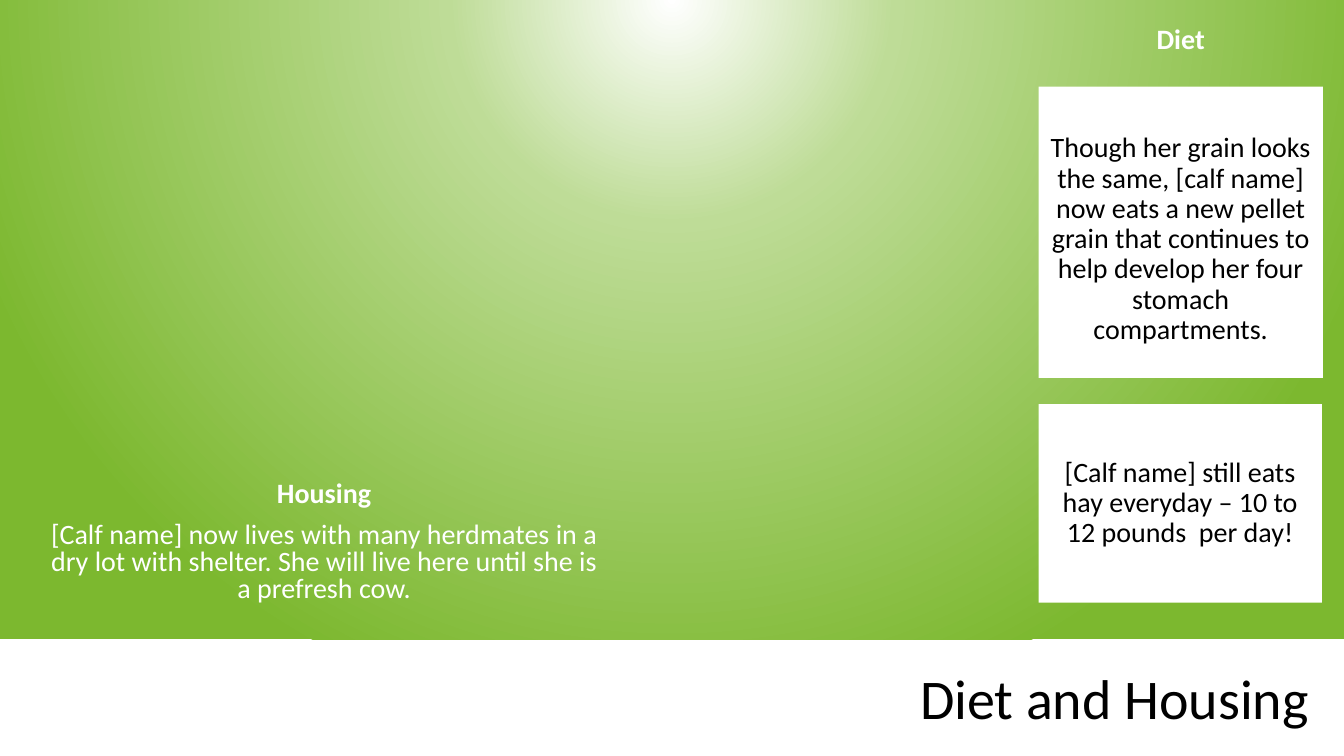
import pptx
import pptx.util
import pptx.oxml
import pptx.oxml.ns
import pptx.dml.color
import pptx.enum.shapes
import pptx.enum.text
from dataclasses import dataclass

Inches = pptx.util.Inches
Pt = pptx.util.Pt
Align = pptx.enum.text.PP_ALIGN
Anchor = pptx.enum.text.MSO_ANCHOR


@dataclass(frozen=True)
class Theme:
    font: str = "Calibri"
    white: str = "FFFFFF"
    black: str = "000000"
    pale: str = "BEDC97"
    green: str = "7CB82F"
    title: int = 40
    body: int = 20
    gap: int = 10


THEME = Theme()


def color(code):
    return pptx.dml.color.RGBColor.from_string(code)


def place(shape, left, top, width, height):
    shape.left, shape.top = Inches(left), Inches(top)
    shape.width, shape.height = Inches(width), Inches(height)


def add_run(para, text, size, tint, bold=False):
    run = para.add_run()
    run.text = text
    run.font.name = THEME.font
    run.font.size = Pt(size)
    run.font.bold = bold
    run.font.color.rgb = color(tint)


def add_rect(slide, left, top, width, height):
    rect = slide.shapes.add_shape(
        pptx.enum.shapes.MSO_SHAPE.RECTANGLE,
        Inches(left), Inches(top), Inches(width), Inches(height))
    rect.shadow.inherit = False
    rect.line.fill.background()
    return rect


def add_glow(slide):
    rect = add_rect(slide, 0, 0, 13.33, 6.34)
    rect.fill.gradient()
    grad = rect.element.spPr.find(pptx.oxml.ns.qn("a:gradFill"))
    stops = ((0, THEME.white), (30, THEME.pale), (100, THEME.green))
    marks = "".join(
        f'<a:gs pos="{pos * 1000}"><a:srgbClr val="{tint}"/></a:gs>'
        for pos, tint in stops)
    fresh = pptx.oxml.parse_xml(
        f'<a:gradFill {pptx.oxml.ns.nsdecls("a")} rotWithShape="1">'
        f'<a:gsLst>{marks}</a:gsLst><a:path path="circle">'
        '<a:fillToRect l="50000" t="-80000" r="50000" b="180000"/>'
        '</a:path></a:gradFill>')
    grad.getparent().replace(grad, fresh)


def set_title(slide, text):
    title = slide.shapes.title
    place(title, 3.57, 6.34, 9.77, 1.15)
    frame = title.text_frame
    frame.word_wrap = True
    frame.vertical_anchor = Anchor.MIDDLE
    frame.margin_right = Inches(0.36)
    para = frame.paragraphs[0]
    para.alignment = Align.RIGHT
    add_run(para, text, THEME.title, THEME.black)


def fill_text(shape, lines, tint, space=1.0, top=0.05, bottom=0.05):
    frame = shape.text_frame
    frame.word_wrap = True
    frame.vertical_anchor = Anchor.MIDDLE
    frame.margin_top, frame.margin_bottom = Inches(top), Inches(bottom)
    for index, (text, bold) in enumerate(lines):
        para = frame.add_paragraph() if index else frame.paragraphs[0]
        para.alignment = Align.CENTER
        para.line_spacing = space
        para.space_before = Pt(THEME.gap if index else 0)
        add_run(para, text, THEME.body, tint, bold)


def add_label(slide, box, lines, **style):
    label = slide.shapes.add_textbox(*map(Inches, box))
    fill_text(label, lines, THEME.white, **style)


def add_card(slide, box, text, top=0.05):
    card = add_rect(slide, *box)
    card.fill.solid()
    card.fill.fore_color.rgb = color(THEME.white)
    fill_text(card, [(text, False)], THEME.black, space=0.9, top=top)


def main():
    deck = pptx.Presentation()
    deck.slide_width, deck.slide_height = Inches(13.33), Inches(7.5)
    slide = deck.slides.add_slide(deck.slide_layouts[5])
    add_glow(slide)
    set_title(slide, "Diet and Housing")
    add_label(slide, (0.35, 4.84, 5.73, 1.36), [
        ("Housing", True),
        ("[Calf name] now lives with many herdmates in a dry lot with "
         "shelter. She will live here until she is a prefresh cow.", False),
    ], space=0.8, bottom=0.32)
    add_card(slide, (10.3, 0.86, 2.82, 2.89),
             "Though her grain looks the same, [calf name] now eats a new "
             "pellet grain that continues to help develop her four stomach "
             "compartments.", top=0.19)
    add_card(slide, (10.3, 4.01, 2.81, 1.97),
             "[Calf name] still eats hay everyday – 10 to 12 pounds  per day!")
    add_label(slide, (10.55, 0.16, 2.32, 0.44), [("Diet", True)])
    deck.save("out.pptx")


if __name__ == "__main__":
    main()
